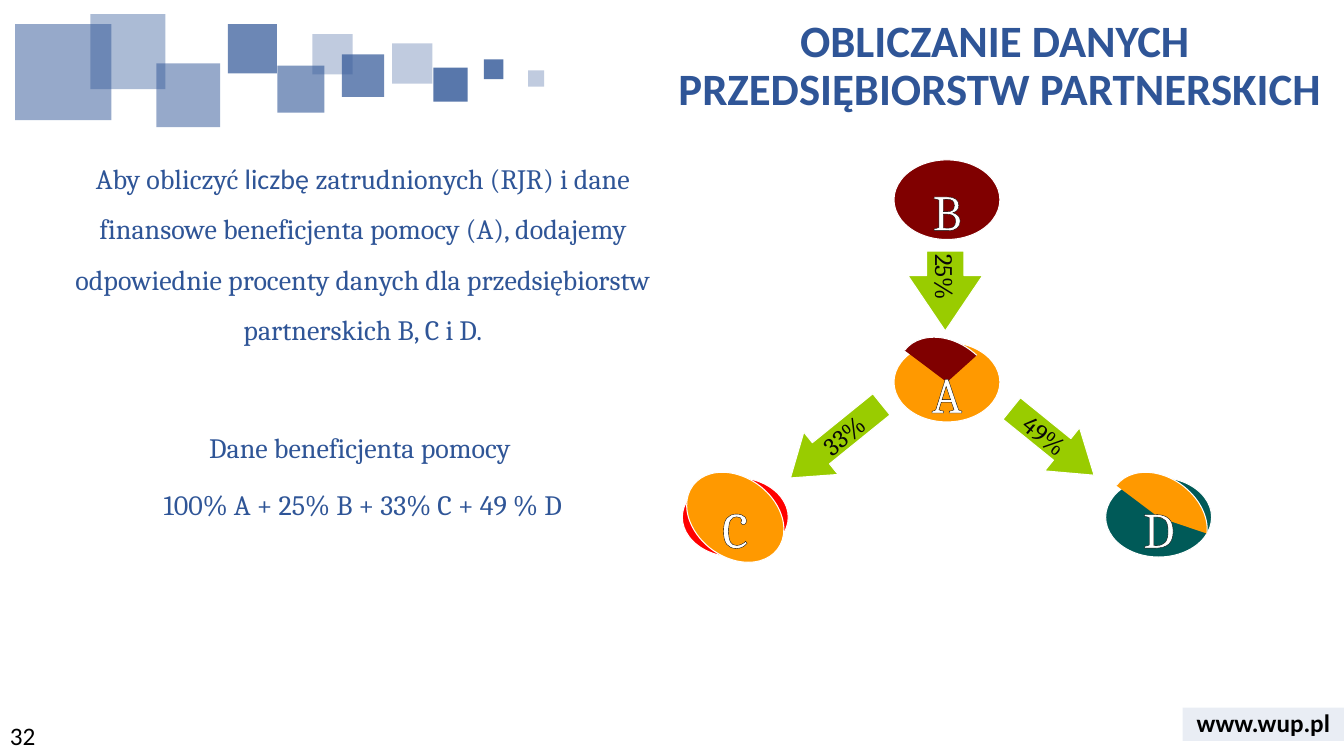
from dataclasses import dataclass

from lxml.etree import SubElement
from pptx import Presentation
from pptx.dml.color import RGBColor
from pptx.enum.shapes import MSO_SHAPE as Shape
from pptx.enum.text import MSO_ANCHOR as Anchor, PP_ALIGN as Align
from pptx.oxml import parse_xml
from pptx.oxml.ns import nsdecls, qn
from pptx.util import Inches, Pt


@dataclass(frozen=True)
class Theme:
    blue: str = "2F5597"
    white: str = "FFFFFF"
    black: str = "000000"
    ink: str = "080808"
    orange: str = "FF9900"
    maroon: str = "800000"
    red: str = "FF0000"
    teal: str = "005A58"
    lime: str = "99CC00"
    sans: str = "Calibri"
    serif: str = "Cambria"
    title: int = 32
    letter: int = 36
    body: int = 20
    small: int = 18
    edge: float = 0.75


T = Theme()
WIDE, HIGH = Inches(13.33), Inches(7.5)
COL, ROW = WIDE / 100, HIGH / 100


def frame_of(left, top, wide, high):
    return round(left * COL), round(top * ROW), round(wide * COL), round(high * ROW)


def draw(slide, kind, box, color, alpha=100, edge=None):
    shape = slide.shapes.add_shape(kind, *frame_of(*box))
    shape.shadow.inherit = False
    shape.fill.solid()
    shape.fill.fore_color.rgb = RGBColor.from_string(color)
    if alpha < 100:
        tint = shape.fill._xPr.find(qn("a:solidFill"))[0]
        SubElement(tint, qn("a:alpha"), val=str(alpha * 1000))
    if edge:
        shape.line.color.rgb = RGBColor.from_string(edge)
        shape.line.width = Pt(T.edge)
    else:
        shape.line.fill.background()
    return shape


def note(slide, box, wrap=True):
    frame = slide.shapes.add_textbox(*frame_of(*box)).text_frame
    frame.word_wrap = wrap
    return frame


def write(para, text, size, face, color, bold=False, align=Align.CENTER):
    para.alignment = align
    run = para.add_run()
    run.text = text
    run.font.size = Pt(size)
    run.font.name = face
    run.font.bold = bold
    run.font.color.rgb = RGBColor.from_string(color)
    return run


def add_squares(slide, box):
    left, top = box[:2]
    for x, y, side, alpha in (
            (29.18, 5.73, 3, 30), (32.25, 8.93, 2.55, 80), (25.43, 7.2, 3.15, 70),
            (1.13, 3.2, 7.15, 50), (20.63, 8.67, 3.5, 60), (11.63, 8.4, 4.75, 50),
            (6.72, 1.87, 5.58, 40), (36, 7.87, 1.46, 80), (16.95, 3.2, 3.66, 70),
            (23.25, 4.53, 3, 30), (39.3, 9.33, 1.2, 30)):
        draw(slide, Shape.RECTANGLE, (left + x, top + y, side, side * COL / ROW), T.blue, alpha)


def add_title(slide, box):
    para = note(slide, box).paragraphs[0]
    para.line_spacing = 0.9
    write(para, "OBLICZANIE DANYCH ", T.title, T.sans, T.blue, True)
    para.add_line_break()
    write(para, "PRZEDSIĘBIORSTW PARTNERSKICH", T.title, T.sans, T.blue, True)


def add_body(slide, box):
    frame = note(slide, box)
    rest = ("zatrudnionych (RJR) i dane finansowe beneficjenta pomocy (A), dodajemy "
            "odpowiednie procenty danych dla przedsiębiorstw partnerskich B, C i D.")
    lines = (
        (0, (("Aby obliczyć ", T.serif), ("liczbę ", T.sans), (rest, T.serif))),
        (48, (("Dane beneficjenta pomocy ", T.serif),)),
        (4.5, (("100% A + 25% B + 33% C + 49 % D", T.serif),)))
    for i, (gap, runs) in enumerate(lines):
        para = frame.add_paragraph() if i else frame.paragraphs[0]
        para.line_spacing = 1.5
        para.space_before = Pt(gap)
        for text, face in runs:
            write(para, text, T.body, face, T.blue)


def center(x, y, wide, high):
    return x - wide / 2, y - high / 2, wide, high


def add_firm(slide, x, y, name, color, part=None, start=0, end=0):
    wide, high = 7.88, 10.53
    draw(slide, Shape.OVAL, center(x, y, wide, high), color, edge=T.white)
    if part:
        upright = center(x, y, high * ROW / COL, wide * COL / ROW)
        share = draw(slide, Shape.ARC, upright, part, edge=T.white)
        share.rotation = 307
        share.adjustments[0] = start * 0.6
        share.adjustments[1] = end * 0.6
    frame = note(slide, center(x, y - 0.1, 4.73, 6.27), wrap=False)
    run = write(frame.paragraphs[0], name, T.letter, T.serif, T.white)
    run.font._element.insert(0, parse_xml(
        f'<a:ln {nsdecls("a")} w="{Pt(T.edge)}"><a:solidFill>'
        f'<a:srgbClr val="{T.black}"/></a:solidFill></a:ln>'))


def add_arrow(slide, x, y, wide, high, kind, turn, text, head):
    arrow = draw(slide, kind, center(x, y, wide, high), T.lime, edge=T.white)
    arrow.rotation = turn
    arrow.adjustments[0] = 0.5
    arrow.adjustments[1] = head
    frame = arrow.text_frame
    frame.word_wrap = False
    frame.vertical_anchor = Anchor.MIDDLE
    write(frame.paragraphs[0], text, T.small, T.serif, T.ink)


def add_chain(slide, box):
    left, top = box[:2]
    mid, low, span = 20.46, 48.42, 15.75
    for x, y, *look in (
            (mid, 30.55, "A", T.orange, T.maroon, 270, 11),
            (mid, 6.42, "B", T.maroon),
            (mid - span, low, "C", T.red, T.orange, 0, 359.99),
            (mid + span, low, "D", T.teal, T.orange, 270, 71.6)):
        add_firm(slide, left + x, top + y, *look)
    for x, y, *look in (
            (20.33, 18.5, 5.93, 9.87, Shape.RIGHT_ARROW, 90, "25%", 0.74),
            (28.34, 38.45, 7.88, 7.33, Shape.RIGHT_ARROW, 39, "49%", 0.74),
            (12.2, 38.35, 8.7, 7.2, Shape.LEFT_ARROW, 321, "33%", 0.72)):
        add_arrow(slide, left + x, top + y, *look)


def add_foot(slide, box):
    left, top, wide, high = box
    label = 12
    edge = left + wide - label
    draw(slide, Shape.RECTANGLE, (edge, top + 0.67, label, 4.4), T.blue, 10)
    site = note(slide, (edge, top, label, 5.33))
    site.vertical_anchor = Anchor.MIDDLE
    write(site.paragraphs[0], "www.wup.pl", T.small, T.sans, T.black, True)
    page = note(slide, (left, top + 1.74, 22.5, high - 1.74))
    write(page.paragraphs[0], "32", T.small, T.sans, T.black, align=Align.LEFT)


def main():
    deck = Presentation()
    deck.slide_width, deck.slide_height = WIDE, HIGH
    slide = deck.slides.add_slide(deck.slide_layouts[6])
    add_squares(slide, (0, 0, 42, 18))
    add_title(slide, (48.8, 1.8, 51.2, 14))
    add_chain(slide, (50, 20, 42, 56))
    add_body(slide, (3.23, 18.5, 47.55, 57.73))
    add_foot(slide, (0, 92.93, 100, 7.07))
    deck.save("out.pptx")


if __name__ == "__main__":
    main()
